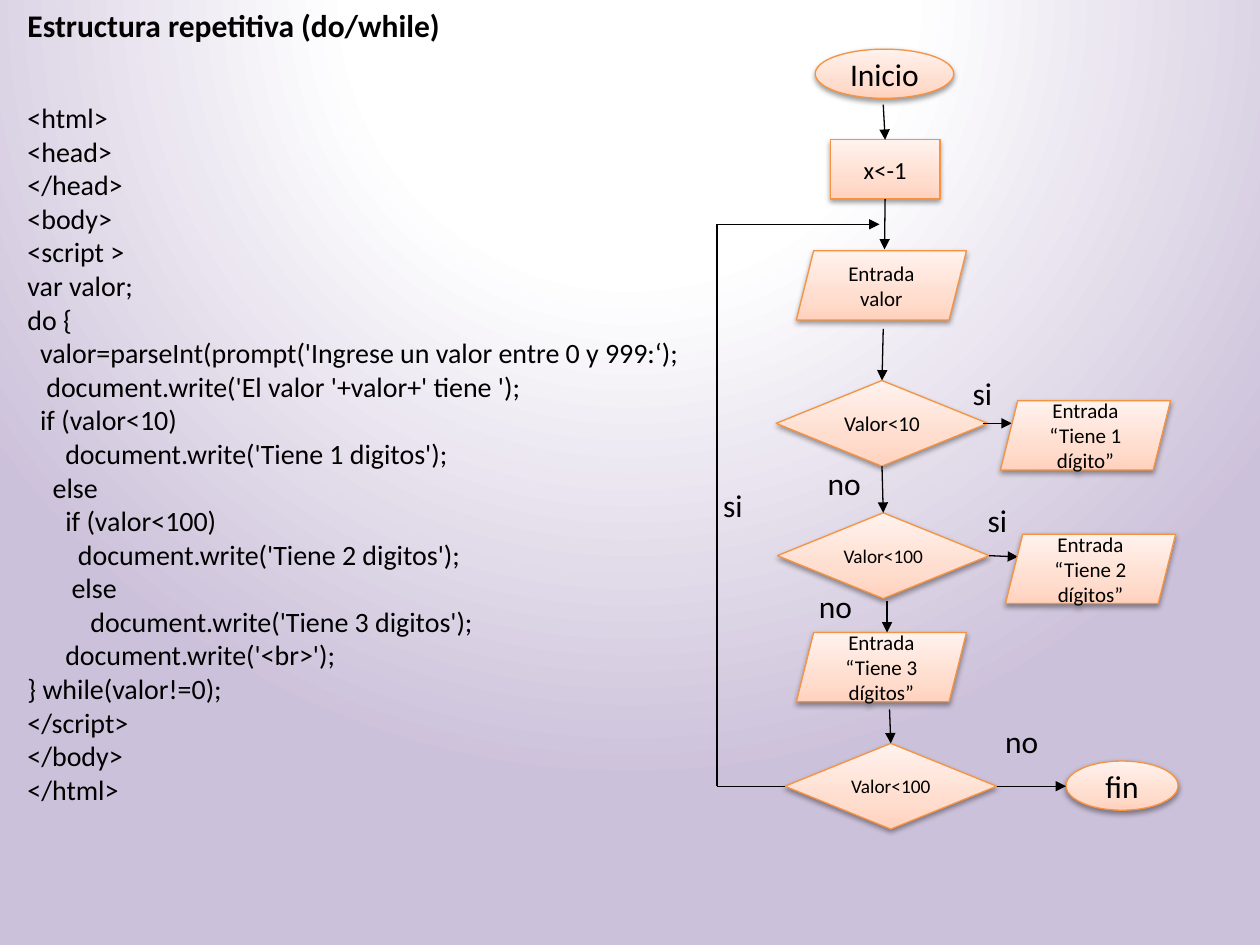
from lxml import etree
from pptx import Presentation, util as u
from pptx.dml.color import RGBColor
from pptx.enum import shapes, text
from pptx.oxml.ns import qn

BLACK = RGBColor(0, 0, 0)
ORANGE = RGBColor(0xF6, 0x92, 0x40)
WHITE = RGBColor(0xFF, 0xFF, 0xFF)
LAVENDER = RGBColor(0xCC, 0xC1, 0xDA)
PEACH = [(0, RGBColor(0xFF, 0xD2, 0xBD)), (35, RGBColor(0xFF, 0xDE, 0xD0)),
         (100, RGBColor(0xFF, 0xF2, 0xED))]
BACKDROP = [(0, WHITE), (35, WHITE), (100, LAVENDER)]
TOP, LEFT, BOTTOM, RIGHT = range(4)
SHAPE = shapes.MSO_SHAPE

CODE = """<html>
<head>
</head>
<body>
<script >
var valor;
do {
  valor=parseInt(prompt('Ingrese un valor entre 0 y 999:‘);
   document.write('El valor '+valor+' tiene ');
  if (valor<10)
      document.write('Tiene 1 digitos');
    else
      if (valor<100)
        document.write('Tiene 2 digitos');
       else
          document.write('Tiene 3 digitos');
      document.write('<br>');
} while(valor!=0);
</script>
</body>
</html>"""


def sub(parent, tag, **attrs):
    return etree.SubElement(parent, qn(tag), {k: str(v) for k, v in attrs.items()})


def set_gradient(fill, owner, stops):
    fill.gradient()
    grad = owner.find(".//" + qn("a:gradFill"))
    for child in list(grad):
        grad.remove(child)
    gs_list = sub(grad, "a:gsLst")
    for pos, color in stops:
        sub(sub(gs_list, "a:gs", pos=pos * 1000), "a:srgbClr", val=color)
    return grad


def set_background(s):
    grad = set_gradient(s.background.fill, s.element, BACKDROP)
    path = sub(grad, "a:path", path="circle")
    sub(path, "a:fillToRect", l=50000, t=-80000, r=50000, b=180000)


def write(tf, content, size=18, bold=False, align=text.PP_ALIGN.LEFT):
    for i, line in enumerate(content.split("\n")):
        p = tf.paragraphs[0] if i == 0 else tf.add_paragraph()
        p.alignment = align
        r = p.add_run()
        r.text = line
        r.font.name = "Calibri"
        r.font.size = u.Pt(size)
        r.font.bold = bold
        r.font.color.rgb = BLACK


def add_label(s, content, x, y, w, h=0.4, wrap=True, **fmt):
    tf = s.shapes.add_textbox(*map(u.Inches, (x, y, w, h))).text_frame
    tf.word_wrap = wrap
    tf.auto_size = text.MSO_AUTO_SIZE.SHAPE_TO_FIT_TEXT
    write(tf, content, **fmt)


def add_node(s, kind, content, x, y, w, h, size=12):
    sp = s.shapes.add_shape(kind, *map(u.Inches, (x, y, w, h)))
    grad = set_gradient(sp.fill, sp.element.spPr, PEACH)
    sub(grad, "a:lin", ang=270 * 60000, scaled=0)
    sp.line.color.rgb = ORANGE
    sp.line.width = u.Pt(0.75)
    sp.shadow.inherit = False
    effects = sp.element.spPr.find(qn("a:effectLst"))
    shadow = sub(effects, "a:outerShdw", blurRad=u.Pt(3.1), dist=u.Pt(1.6),
                 dir=90 * 60000, rotWithShape=0)
    sub(sub(shadow, "a:srgbClr", val=BLACK), "a:alpha", val=38000)
    sp.text_frame.vertical_anchor = text.MSO_ANCHOR.MIDDLE
    write(sp.text_frame, content, size=size, align=text.PP_ALIGN.CENTER)
    return sp


def add_decision(s, content, x, y, size=11):
    return add_node(s, SHAPE.DIAMOND, content, x, y, 1.68, 0.68, size)


def add_data(s, content, x, y):
    return add_node(s, SHAPE.PARALLELOGRAM, "Entrada\n" + content, x, y, 1.35, 0.55)


def add_line(s, start, end, begin=None, finish=None, arrow=True):
    cx = s.shapes.add_connector(shapes.MSO_CONNECTOR.STRAIGHT,
                                *map(u.Inches, start + end))
    if begin:
        cx.begin_connect(*begin)
    if finish:
        cx.end_connect(*finish)
    cx.line.color.rgb = BLACK
    cx.line.width = u.Pt(0.75)
    if arrow:
        sub(cx.line._get_or_add_ln(), "a:tailEnd", type="triangle")
    sub(cx.element.spPr, "a:effectLst")


def add_flowchart(s):
    add_node(s, SHAPE.OVAL, "Inicio", 6.47, 0.39, 1.1, 0.39, 18)
    add_node(s, SHAPE.OVAL, "fin", 8.46, 6.04, 0.89, 0.39, 18)
    assign = add_node(s, SHAPE.RECTANGLE, "x<-1", 6.59, 1.11, 0.87, 0.47, 14)
    add_data(s, "valor", 6.32, 1.99)
    under_10 = add_decision(s, "Valor<10", 6.16, 3.02, 12)
    under_100 = add_decision(s, "Valor<100", 6.17, 4.07)
    repeat = add_decision(s, "Valor<100", 6.23, 5.9)

    add_line(s, (7.01, 0.83), (7.01, 1.11), finish=(assign, TOP))
    add_line(s, (7.02, 1.58), (7.02, 1.98), begin=(assign, BOTTOM))
    add_line(s, (7.01, 2.61), (7.01, 3.01), finish=(under_10, TOP))
    add_line(s, (7.02, 3.69), (7.02, 4.09), (under_10, BOTTOM), (under_100, TOP))
    add_line(s, (7.8, 3.36), (8.03, 3.36))
    add_line(s, (7.84, 4.42), (8.08, 4.42), begin=(under_100, RIGHT))
    add_line(s, (7.06, 5.63), (7.06, 5.88), finish=(repeat, TOP))
    add_line(s, (7.92, 6.24), (8.46, 6.24), begin=(repeat, RIGHT))
    add_line(s, (6.25, 6.24), (5.69, 6.24), begin=(repeat, LEFT), arrow=False)
    add_line(s, (5.69, 6.24), (5.69, 1.78), arrow=False)
    add_line(s, (5.69, 1.78), (6.98, 1.78))

    add_data(s, "“Tiene 1 dígito”", 7.94, 3.18)
    add_data(s, "“Tiene 2 dígitos”", 7.98, 4.24)
    add_data(s, "“Tiene 3 dígitos”", 6.32, 5.02)
    add_line(s, (7.04, 4.77), (7.04, 5.02))

    for x, y in [(7.62, 2.92), (7.74, 3.93), (5.64, 3.81)]:
        add_label(s, "si", x, y, 0.41)
    for x, y in [(6.47, 3.63), (6.4, 4.61), (7.88, 5.68)]:
        add_label(s, "no", x, y, 0.57)


def main():
    prs = Presentation()
    prs.slide_width, prs.slide_height = u.Inches(10), u.Inches(7.5)
    s = prs.slides.add_slide(prs.slide_layouts[6])
    set_background(s)
    add_label(s, "Estructura repetitiva (do/while)", 0.12, 0, 3.5, wrap=False, bold=True)
    add_label(s, CODE, 0.12, 0.75, 6.2, 5.76, size=16)
    add_flowchart(s)
    prs.save("out.pptx")


if __name__ == "__main__":
    main()
